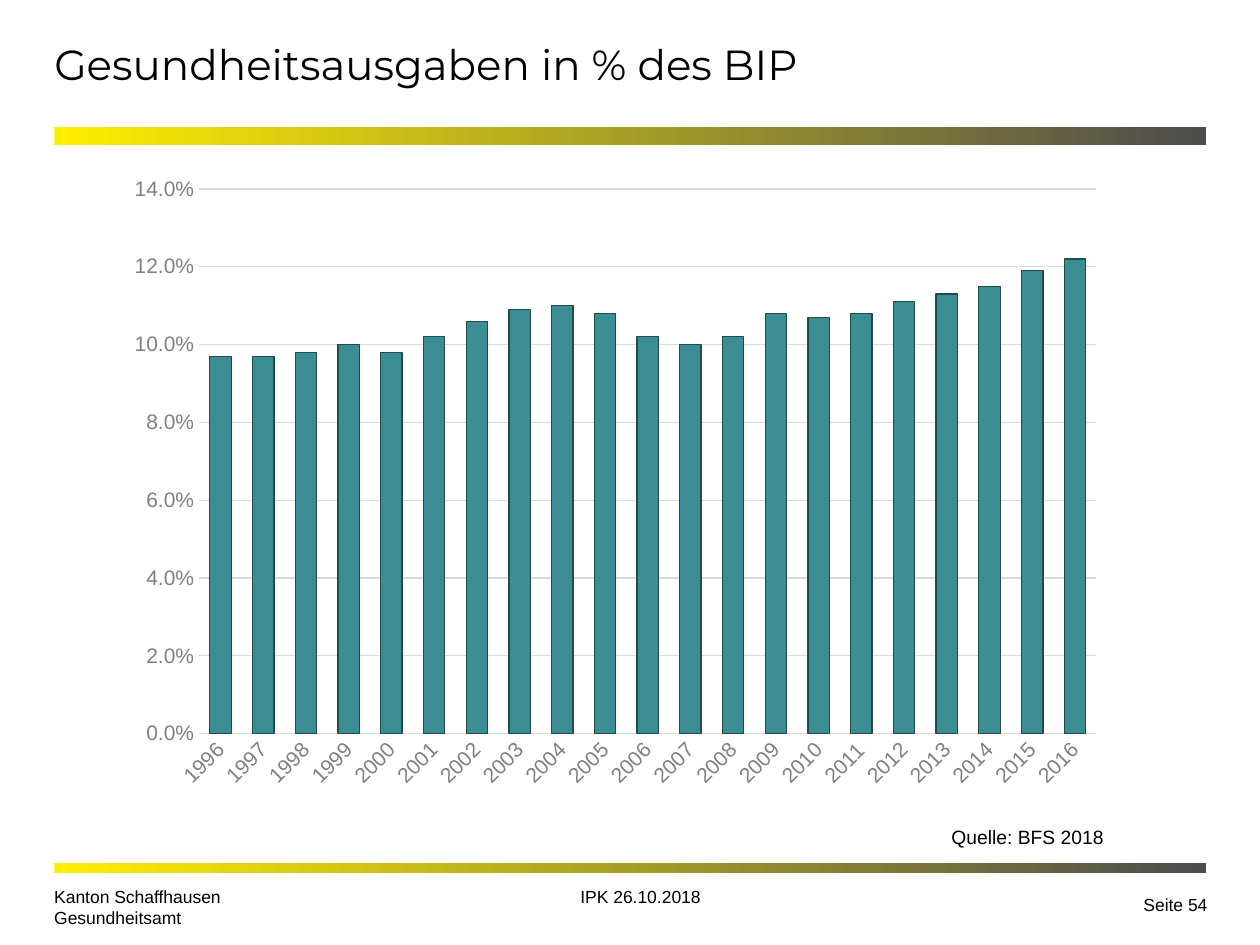
from pptx import Presentation
from pptx.chart.data import CategoryChartData
from pptx.dml.color import RGBColor
from pptx.enum.chart import XL_CHART_TYPE as ChartType, XL_TICK_MARK as TickMark
from pptx.enum.shapes import MSO_SHAPE as Shape
from pptx.enum.text import MSO_ANCHOR as Anchor, PP_ALIGN as Align
from pptx.util import Pt

COLORS = {
    "yellow": "FFEE00",
    "dark_gray": "4D4D4D",
    "text": "000000",
    "axis_text": "808080",
    "grid": "D9D9D9",
    "bar": "3C8C93",
    "bar_line": "224B50",
}
SHARES = [
    0.097, 0.097, 0.098, 0.1, 0.098, 0.102, 0.106, 0.109, 0.11, 0.108, 0.102,
    0.1, 0.102, 0.108, 0.107, 0.108, 0.111, 0.113, 0.115, 0.119, 0.122,
]
FIRST_YEAR = 1996
MARGIN = 31
CONTENT_WIDTH = 658


def color(name):
    """Return a named colour."""
    return RGBColor.from_string(COLORS[name])


def format_font(font, size, color_name="text", family="Arial"):
    """Set family, size and colour of a font."""
    font.name = family
    font.size = Pt(size)
    font.color.rgb = color(color_name)


def format_line(line, color_name):
    """Set a thin line in a named colour."""
    line.color.rgb = color(color_name)
    line.width = Pt(0.75)


def fill_text(shape, text, size, align=Align.LEFT, anchor=Anchor.TOP,
              side_inset=7.2, family="Arial"):
    """Write formatted text into a shape."""
    frame = shape.text_frame
    frame.word_wrap = True
    frame.vertical_anchor = anchor
    frame.margin_left = frame.margin_right = Pt(side_inset)
    frame.margin_top = frame.margin_bottom = Pt(3.6)
    frame.text = text
    for paragraph in frame.paragraphs:
        paragraph.alignment = align
        for run in paragraph.runs:
            format_font(run.font, size, family=family)


def add_text(slide, box, text, size, **options):
    """Add a text box in the given box."""
    fill_text(slide.shapes.add_textbox(*map(Pt, box)), text, size, **options)


def add_gradient_bar(slide, box):
    """Add a yellow to gray bar."""
    bar = slide.shapes.add_shape(Shape.RECTANGLE, *map(Pt, box))
    bar.shadow.inherit = False
    bar.line.fill.background()
    bar.fill.gradient()
    bar.fill.gradient_angle = 0
    for stop, name, position in zip(bar.fill.gradient_stops, ("yellow", "dark_gray"), (0, 1)):
        stop.color.rgb = color(name)
        stop.position = position


def add_header(slide, box):
    """Place the title and the bar below it."""
    left, top, width, height = box
    title = slide.shapes.title
    title.left, title.top, title.width, title.height = map(Pt, (left, top, 514, height))
    fill_text(title, "Gesundheitsausgaben in % des BIP", 24,
              anchor=Anchor.MIDDLE, side_inset=0, family="Montserrat")
    add_gradient_bar(slide, (left, top + height, width, 10))


def add_spending_chart(slide, box):
    """Place the column chart and its source line."""
    left, top, width, height = box
    data = CategoryChartData(number_format="0.0%")
    data.categories = [str(FIRST_YEAR + offset) for offset in range(len(SHARES))]
    data.add_series("Series 1", SHARES)
    chart = slide.shapes.add_chart(ChartType.COLUMN_CLUSTERED, *map(Pt, box), data).chart
    chart.has_legend = False
    chart.has_title = False
    format_font(chart.font, 10)

    plot = chart.plots[0]
    plot.vary_by_categories = False
    plot.gap_width = 100
    plot.overlap = -24
    series = plot.series[0]
    series.format.fill.solid()
    series.format.fill.fore_color.rgb = color("bar")
    format_line(series.format.line, "bar_line")

    years, shares = chart.category_axis, chart.value_axis
    for axis in (years, shares):
        axis.major_tick_mark = axis.minor_tick_mark = TickMark.NONE
        format_font(axis.tick_labels.font, 12, "axis_text")
    format_line(years.format.line, "grid")
    years.has_major_gridlines = False
    years._element.txPr.bodyPr.set("rot", "-2700000")
    shares.minimum_scale, shares.maximum_scale, shares.major_unit = 0, 0.14, 0.02
    shares.tick_labels.number_format = "0.0%"
    shares.tick_labels.number_format_is_linked = False
    shares.format.line.fill.background()
    format_line(shares.major_gridlines.format.line, "grid")

    add_text(slide, (left + width - 153, top + height + 11, 153, 21),
             "Quelle: BFS 2018", 11, align=Align.RIGHT)


def add_footer(slide, box):
    """Place the lower bar with sender, event and page."""
    left, top, width, height = box
    add_gradient_bar(slide, (left, top, width, 6))
    text_top, text_height = top + 6.5, height - 6.5
    add_text(slide, (left, text_top, 191, text_height),
             "Kanton Schaffhausen\nGesundheitsamt", 10, anchor=Anchor.BOTTOM, side_inset=0)
    add_text(slide, (left + 221, text_top + 3, 228, 37), "IPK 26.10.2018", 10,
             align=Align.CENTER)
    add_text(slide, (left + width - 60, text_top, 68, text_height), "Seite 54", 10,
             align=Align.RIGHT, anchor=Anchor.MIDDLE)


def main():
    """Build and save the slide."""
    presentation = Presentation()
    presentation.slide_width, presentation.slide_height = Pt(720), Pt(540)
    slide = presentation.slides.add_slide(presentation.slide_layouts[5])
    add_header(slide, (MARGIN, 0, CONTENT_WIDTH, 72.7))
    add_spending_chart(slide, (65.5, 94.3, 572.4, 363))
    add_footer(slide, (MARGIN, 493, CONTENT_WIDTH, 41))
    presentation.save("out.pptx")


if __name__ == "__main__":
    main()
